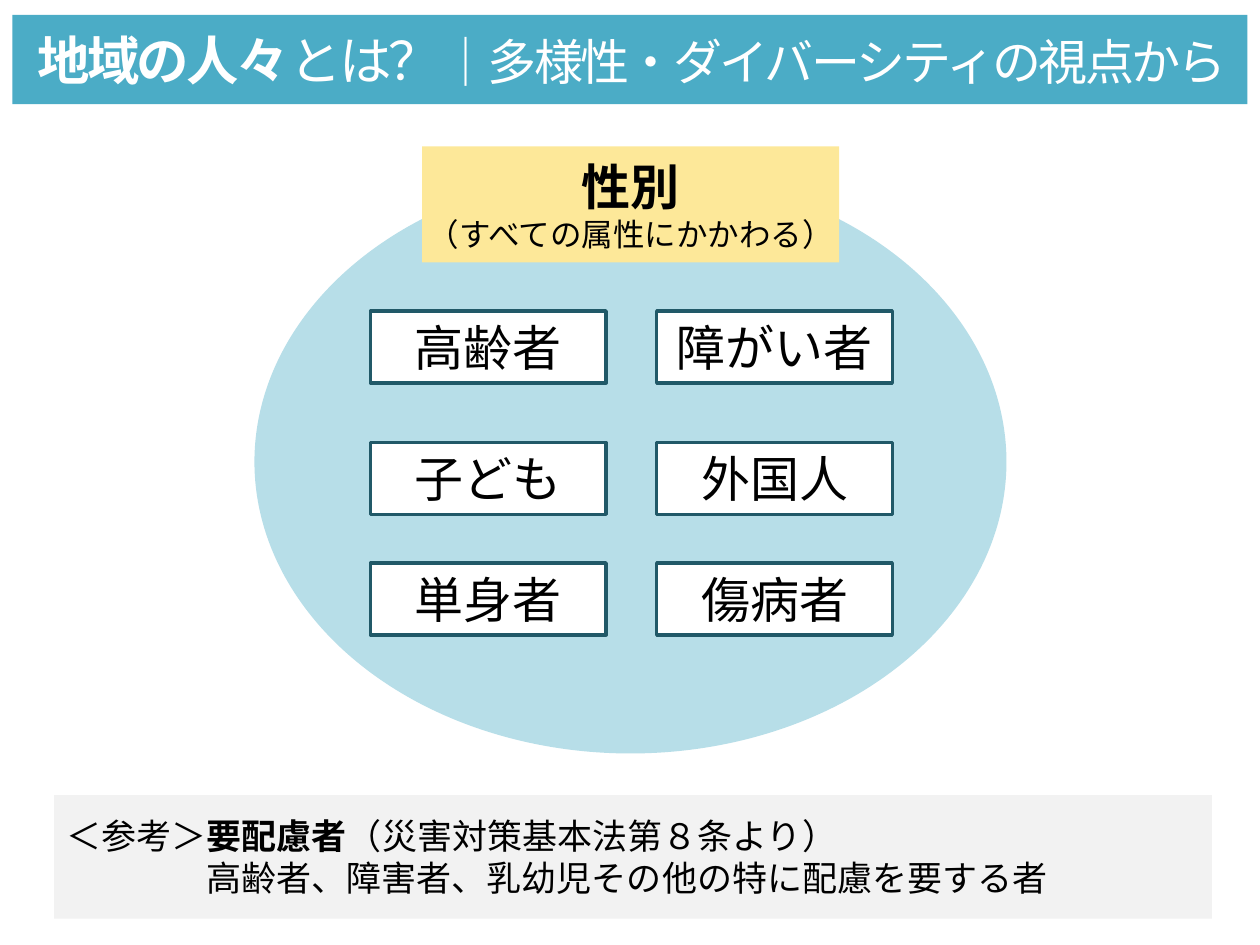
from dataclasses import dataclass

from lxml import etree
from pptx import Presentation
from pptx.dml.color import RGBColor
from pptx.enum.shapes import MSO_SHAPE
from pptx.enum.text import MSO_ANCHOR, PP_ALIGN
from pptx.oxml.ns import qn
from pptx.util import Cm, Pt

RECTANGLE, ELLIPSE = MSO_SHAPE.RECTANGLE, MSO_SHAPE.OVAL
LEFT, CENTER = PP_ALIGN.LEFT, PP_ALIGN.CENTER
MIDDLE = MSO_ANCHOR.MIDDLE


@dataclass(frozen=True)
class Theme:
    banner: str = "4BACC6"
    circle: str = "B7DEE8"
    highlight: str = "FDE899"
    note: str = "F2F2F2"
    outline: str = "215968"
    white: str = "FFFFFF"
    black: str = "000000"
    title_font: str = "Arial"
    label_font: str = "Calibri"
    japanese_font: str = "Noto Sans CJK JP"
    title_size: int = 30
    label_size: int = 28
    note_size: int = 20
    caption_size: int = 18


THEME = Theme()


@dataclass(frozen=True)
class Area:
    left: float
    top: float
    width: float
    height: float


@dataclass(frozen=True)
class Span:
    text: str
    bold: bool = False
    size: int | None = None


@dataclass(frozen=True)
class Line:
    spans: tuple[Span, ...]
    size: int
    font: str = THEME.label_font
    color: str = THEME.black
    align: PP_ALIGN = CENTER
    indent: float = 0
    spacing: float = 0


def add_box(page, area: Area, fill: str, kind=RECTANGLE, outline: str | None = None):
    """Draw a filled shape, with an outline if one is given."""
    box = page.shapes.add_shape(
        kind, Cm(area.left), Cm(area.top), Cm(area.width), Cm(area.height))
    box.shadow.inherit = False
    box.fill.solid()
    box.fill.fore_color.rgb = RGBColor.from_string(fill)
    if outline:
        box.line.color.rgb = RGBColor.from_string(outline)
        box.line.width = Pt(2)
    else:
        box.line.fill.background()
    return box


def write_lines(box, lines: list[Line], wrap: bool = False) -> None:
    """Fill a box with paragraphs, centred vertically."""
    frame = box.text_frame
    frame.word_wrap = wrap
    frame.vertical_anchor = MIDDLE
    for index, line in enumerate(lines):
        para = frame.add_paragraph() if index else frame.paragraphs[0]
        para.alignment = line.align
        para.font.size = Pt(line.size)
        para.font.name = line.font
        para.font.color.rgb = RGBColor.from_string(line.color)
        properties = para._p.get_or_add_pPr()
        properties.set("marL", "0")
        properties.set("indent", str(Cm(line.indent)))
        defaults = properties.find(qn("a:defRPr"))
        defaults.set("spc", str(round(line.spacing * 100)))
        etree.SubElement(defaults, qn("a:ea")).set("typeface", THEME.japanese_font)
        for span in line.spans:
            run = para.add_run()
            run.text = span.text
            run.font.bold = span.bold
            if span.size:
                run.font.size = Pt(span.size)


def add_note(page) -> None:
    note = add_box(page, Area(1.09, 16.03, 23.34, 2.49), THEME.note)
    heading = (Span("＜参考＞"), Span("要配慮者", bold=True),
               Span("（災害対策基本法第８条より）"))
    detail = (Span("高齢者、障害者、乳幼児その他の特に配慮を要する者"),)
    write_lines(note, [
        Line(heading, THEME.note_size, THEME.japanese_font, align=LEFT),
        Line(detail, THEME.note_size, THEME.japanese_font, align=LEFT, indent=2.82),
    ], wrap=True)


def add_title(page) -> None:
    banner = add_box(page, Area(0.25, 0.3, 24.9, 1.8), THEME.banner)
    banner.text_frame.margin_left = Cm(0.5)
    spans = (Span("地域の人々", bold=True), Span("とは？"),
             Span("｜多様性・ダイバーシティの視点から", size=THEME.label_size))
    write_lines(banner, [Line(spans, THEME.title_size, THEME.title_font,
                              THEME.white, LEFT, spacing=-1.5)], wrap=True)


def add_groups(page) -> None:
    columns = (7.47, 13.24)
    rows = {6.27: ("高齢者", "障がい者"),
            8.92: ("子ども", "外国人"),
            11.35: ("単身者", "傷病者")}
    for top, names in rows.items():
        for left, name in zip(columns, names):
            box = add_box(page, Area(left, top, 4.75, 1.45), THEME.white,
                          outline=THEME.outline)
            write_lines(box, [Line((Span(name),), THEME.label_size)])


def add_gender(page) -> None:
    box = add_box(page, Area(8.51, 2.95, 8.41, 2.34), THEME.highlight)
    write_lines(box, [
        Line((Span("性別", bold=True),), THEME.label_size),
        Line((Span("（すべての属性にかかわる）"),), THEME.caption_size),
    ])


def main() -> None:
    deck = Presentation()
    deck.slide_width, deck.slide_height = Cm(25.4), Cm(19.05)
    page = deck.slides.add_slide(deck.slide_layouts[6])

    # Reference note and title banner
    add_note(page)
    add_title(page)

    # Circle of community members, with gender spanning them all
    add_box(page, Area(5.13, 3.43, 15.16, 11.76), THEME.circle, ELLIPSE)
    add_groups(page)
    add_gender(page)

    deck.save("out.pptx")


if __name__ == "__main__":
    main()
